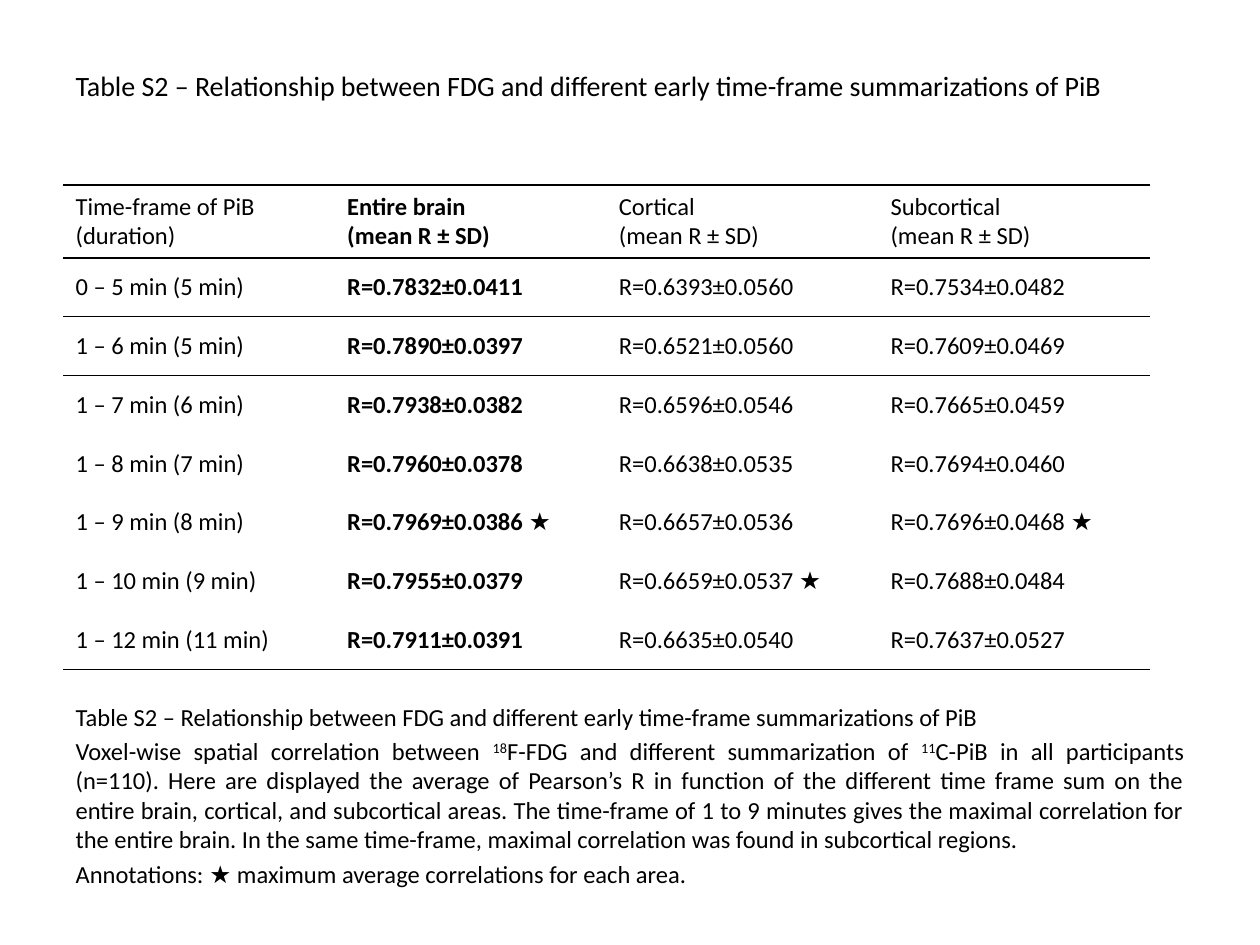
from dataclasses import dataclass

from pptx import Presentation
from pptx.dml.color import RGBColor
from pptx.enum.text import MSO_ANCHOR as Anchor, MSO_AUTO_SIZE as AutoSize, PP_ALIGN as Align
from pptx.oxml.ns import qn
from pptx.oxml.xmlchemy import OxmlElement as Element
from pptx.util import Pt

STAR = "★"
TITLE = "Table S2 – Relationship between FDG and different early time-frame summarizations of PiB"
HEADER = [
    ["Time-frame of PiB (duration)"],
    ["Entire brain", "(mean R ± SD)"],
    ["Cortical", "(mean R ± SD)"],
    ["Subcortical", "(mean R ± SD)"],
]
CORRELATIONS = [
    ("0 – 5 min (5 min)", "0.7832±0.0411", "0.6393±0.0560", "0.7534±0.0482"),
    ("1 – 6 min (5 min)", "0.7890±0.0397", "0.6521±0.0560", "0.7609±0.0469"),
    ("1 – 7 min (6 min)", "0.7938±0.0382", "0.6596±0.0546", "0.7665±0.0459"),
    ("1 – 8 min (7 min)", "0.7960±0.0378", "0.6638±0.0535", "0.7694±0.0460"),
    ("1 – 9 min (8 min)", "0.7969±0.0386 ★", "0.6657±0.0536", "0.7696±0.0468 ★"),
    ("1 – 10 min (9 min)", "0.7955±0.0379", "0.6659±0.0537 ★", "0.7688±0.0484"),
    ("1 – 12 min (11 min)", "0.7911±0.0391", "0.6635±0.0540", "0.7637±0.0527"),
]
RULES = {0: ("a:lnT", "a:lnB"), 1: ("a:lnT", "a:lnB"), 2: ("a:lnT",), 7: ("a:lnB",)}
LEGEND = [
    ([TITLE], Align.LEFT),
    ([
        "Voxel-wise spatial correlation between ", "18",
        "F-FDG and different summarization of ", "11",
        "C-PiB in all participants (n=110). Here are displayed the average of Pearson’s R "
        "in function of the different time frame sum on the entire brain, cortical, and "
        "subcortical areas. The time-frame of 1 to 9 minutes gives the maximal correlation "
        "for the entire brain. In the same time-frame, maximal correlation was found in "
        "subcortical regions.",
    ], Align.JUSTIFY),
    (["Annotations: ", STAR, " maximum average correlations for each area."], Align.LEFT),
]


@dataclass(frozen=True)
class Theme:
    ink: str = "000000"
    font: str = "Calibri"
    star_font: str = "Arial"
    title_size: int = 16
    text_size: int = 14
    rule_width: int = 1
    plain_table: str = "{2D5ABB26-0587-4C30-8999-92F81FD0307C}"


class SlideBuilder:
    """Builds titles, tables and legends on one slide in one theme."""

    def __init__(self, slide, theme):
        self.slide, self.theme = slide, theme

    def add_pieces(self, paragraph, pieces, size, bold=False):
        for piece in pieces:
            run = paragraph.add_run()
            run.text = piece
            run.font.color.rgb = RGBColor.from_string(self.theme.ink)
            name = self.theme.star_font if piece == STAR else self.theme.font
            for key, value in {"name": name, "size": Pt(size), "bold": bold}.items():
                setattr(run.font, key, value)
            if piece.isdigit():
                run.font._element.set("baseline", "30000")

    def place(self, holder, left, top, width, height, anchor):
        box = {"left": left, "top": top, "width": width, "height": height}
        for key, value in box.items():
            setattr(holder, key, Pt(value))
        frame = holder.text_frame
        settings = {"word_wrap": True, "auto_size": AutoSize.NONE, "vertical_anchor": anchor}
        for key, value in settings.items():
            setattr(frame, key, value)
        return frame

    def title(self, text, *box):
        heading = self.place(self.slide.shapes.title, *box, Anchor.MIDDLE).paragraphs[0]
        heading.alignment = Align.LEFT
        self.add_pieces(heading, [text], self.theme.title_size)

    def legend(self, entries, *box):
        frame = self.place(self.slide.placeholders[1], *box, Anchor.TOP)
        for index, (pieces, alignment) in enumerate(entries):
            paragraph = frame.add_paragraph() if index else frame.paragraphs[0]
            paragraph.alignment = alignment
            properties = paragraph._p.get_or_add_pPr()
            for key in ("marL", "indent"):
                properties.set(key, "0")
            properties.append(Element("a:buNone"))
            self.add_pieces(paragraph, pieces, self.theme.text_size)

    def rule(self, cell, side):
        line = Element(side)
        line.set("w", str(Pt(self.theme.rule_width)))
        fill, color = Element("a:solidFill"), Element("a:srgbClr")
        color.set("val", self.theme.ink)
        fill.append(color)
        line.append(fill)
        cell._tc.get_or_add_tcPr().append(line)

    def table(self, rows, rules, left, top, width, header_height, row_height):
        height = header_height + row_height * (len(rows) - 1)
        grid = self.slide.shapes.add_table(
            len(rows), len(rows[0]), Pt(left), Pt(top), Pt(width), Pt(height)).table
        for key in ("first_row", "horz_banding"):
            setattr(grid, key, False)
        grid._tbl.tblPr.find(qn("a:tableStyleId")).text = self.theme.plain_table
        for r, row in enumerate(rows):
            grid.rows[r].height = Pt(row_height if r else header_height)
            for c, lines in enumerate(row):
                cell = grid.cell(r, c)
                cell.vertical_anchor = Anchor.MIDDLE
                for side in rules.get(r, ()):
                    self.rule(cell, side)
                cell.fill.background()
                for index, line in enumerate(lines):
                    frame = cell.text_frame
                    paragraph = frame.add_paragraph() if index else frame.paragraphs[0]
                    value, star, _ = line.partition(STAR)
                    pieces = [value, star] if star else [value]
                    self.add_pieces(paragraph, pieces, self.theme.text_size, bold=c == 1)


def main():
    deck = Presentation()
    deck.slide_width, deck.slide_height = Pt(720), Pt(540)
    builder = SlideBuilder(deck.slides.add_slide(deck.slide_layouts[1]), Theme())
    builder.title(TITLE, 36, 21.6, 648, 54)
    body = [[[frame]] + [[f"R={value}"] for value in values] for frame, *values in CORRELATIONS]
    builder.table([HEADER] + body, RULES, 36, 105.8, 621, 41.6, 33.6)
    builder.legend(LEGEND, 36, 397.4, 648, 91.4)
    deck.save("out.pptx")


if __name__ == "__main__":
    main()
